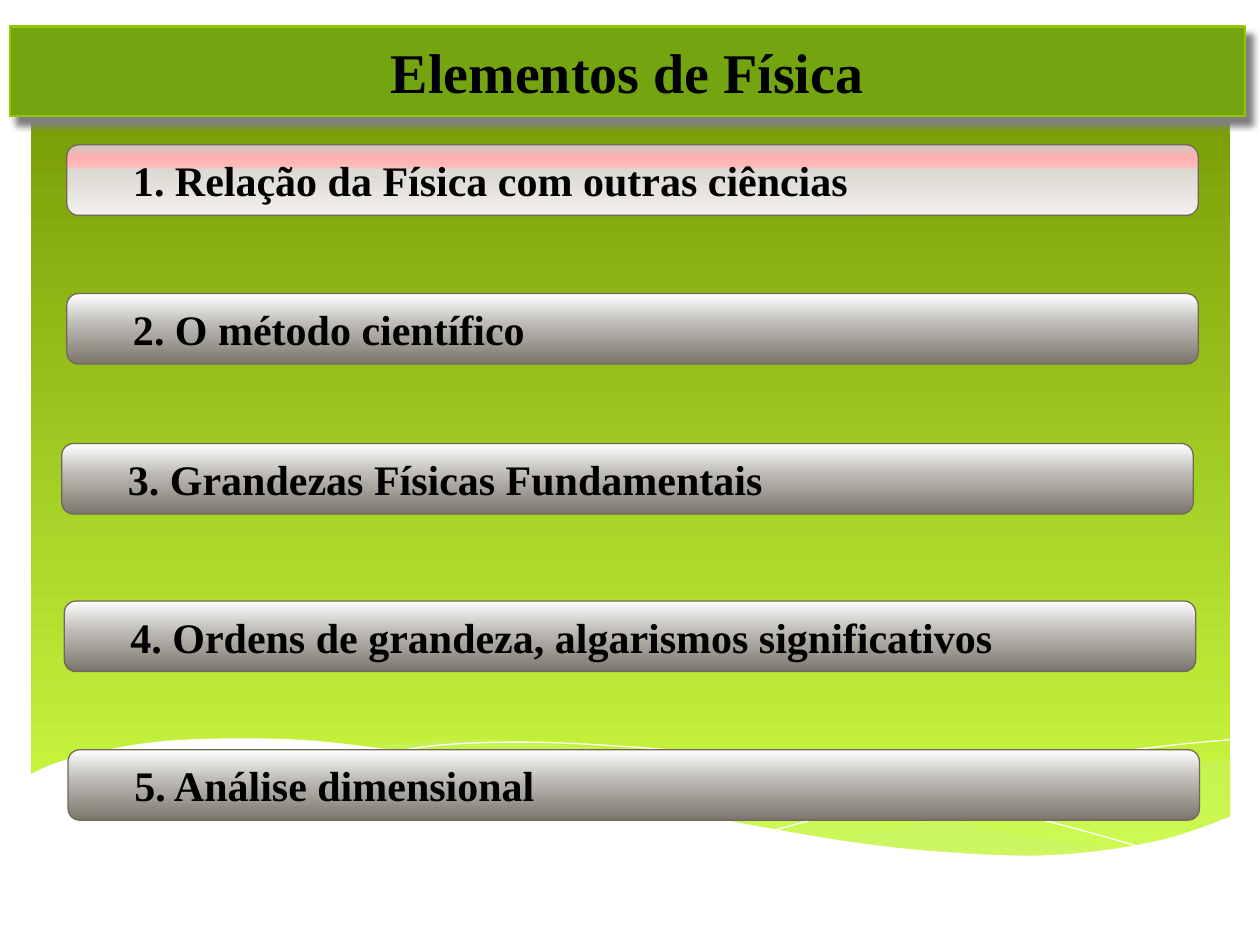
from lxml import etree
from pptx import Presentation
from pptx.dml.color import RGBColor
from pptx.enum.shapes import MSO_SHAPE
from pptx.enum.text import MSO_ANCHOR, MSO_AUTO_SIZE, PP_ALIGN
from pptx.oxml import parse_xml
from pptx.oxml.ns import nsdecls, qn
from pptx.util import Inches, Pt

ROUNDED = MSO_SHAPE.ROUNDED_RECTANGLE
MIDDLE = MSO_ANCHOR.MIDDLE
NO_AUTOFIT = MSO_AUTO_SIZE.NONE
CENTER = PP_ALIGN.CENTER
JUSTIFY = PP_ALIGN.JUSTIFY
TITLE_ONLY = 5
FONT = "Times New Roman"

COLORS = {
    "text": "000000",
    "white": "FFFFFF",
    "banner": "74A510",
    "banner_line": "94C600",
    "shadow": "808080",
    "bar_line": "71685A",
    "wave": "CAF278",
}
BACKDROP = [(0, "6F9400"), (100, "D0FF44")]
GRAY_BAR = [(0, "FFFFFF"), (44, "BCB9B4"), (100, "7B766D")]
PINK_BAR = [(0, "CEC7BF"), (18, "FFB0AF"), (26, "FFB7B6"),
            (31, "FFBBBA"), (35, "DCD8D2"), (100, "F2F0EE")]

TOPICS = [
    ("1. Relação da Física com outras ciências", 0.53, 1.15, PINK_BAR),
    ("2. O método científico", 0.53, 2.33, GRAY_BAR),
    ("3. Grandezas Físicas Fundamentais", 0.49, 3.52, GRAY_BAR),
    ("4. Ordens de grandeza, algarismos significativos", 0.51, 4.77, GRAY_BAR),
    ("5. Análise dimensional", 0.54, 5.95, GRAY_BAR),
]

RIGHT_WAVE_TOP = [(9.77, 6.01), (9.36, 6.09), (8.62, 6.25), (7.8, 6.44), (6.62, 6.67)]
RIGHT_WAVE_BOTTOM = [(6.62, 6.67), (7.06, 6.73), (7.58, 6.78), (8.15, 6.8),
                     (8.73, 6.76), (9.22, 6.67), (9.77, 6.49)]
MIDDLE_WAVE_TOP = [(8.94, 6.75), (8.08, 6.62), (7.07, 6.42), (6.3, 6.24), (5.55, 6.07),
                   (4.89, 5.96), (4.2, 5.89), (3.62, 5.87), (2.87, 5.93)]
MIDDLE_WAVE_BOTTOM = [(2.87, 5.93), (3.63, 6.04), (4.5, 6.24), (5.3, 6.42), (6.19, 6.6),
                      (6.96, 6.72), (7.62, 6.79), (8.29, 6.8), (8.94, 6.75)]
LONG_STROKE = [(3.1, 5.97), (3.53, 5.91), (4.17, 5.89), (4.89, 5.92), (5.57, 5.98),
               (6.37, 6.1), (7.28, 6.28), (8.32, 6.52), (9.08, 6.73)]
SHORT_STROKE = [(6.14, 6.59), (6.96, 6.37), (7.77, 6.18), (8.67, 6), (9.25, 5.92), (9.76, 5.87)]
FLOOR_TOP = [(0.23, 6.15), (0.46, 6.05), (0.85, 5.95), (1.32, 5.88), (1.93, 5.86),
             (2.5, 5.88), (3.16, 5.96), (3.91, 6.09), (4.47, 6.22), (5.29, 6.41),
             (6.03, 6.56), (6.88, 6.7), (7.61, 6.77), (8.23, 6.79), (8.75, 6.75),
             (9.2, 6.67), (9.5, 6.58), (9.77, 6.48)]
FLOOR_CORNERS = [(9.77, 7.31), (0.23, 7.31)]


def color(name):
    return RGBColor.from_string(COLORS[name])


def set_gradient(shape, stops):
    shape.fill.gradient()
    shape.fill.gradient_angle = 270
    stop_list = shape.fill._fill._gradFill.find(qn("a:gsLst"))
    for stop in list(stop_list):
        stop_list.remove(stop)
    for position, value in stops:
        stop = etree.SubElement(stop_list, qn("a:gs"), pos=str(position * 1000))
        etree.SubElement(stop, qn("a:srgbClr"), val=value)


def set_line(shape, name, width):
    shape.line.color.rgb = color(name)
    shape.line.width = Pt(width)


def set_text(shape, text, size, alignment):
    frame = shape.text_frame
    frame.text = text
    frame.word_wrap = True
    frame.auto_size = NO_AUTOFIT
    frame.vertical_anchor = MIDDLE
    paragraph = frame.paragraphs[0]
    paragraph.alignment = alignment
    paragraph.font.name = FONT
    paragraph.font.size = Pt(size)
    paragraph.font.bold = True
    paragraph.font.color.rgb = color("text")
    return paragraph


def smooth_curve(points, steps=5):
    padded = [points[0]] + points + [points[-1]]
    curve = [points[0]]
    for a, b, c, d in zip(padded, padded[1:], padded[2:], padded[3:]):
        for step in range(1, steps + 1):
            t = step / steps
            curve.append(tuple(
                b[i] + 0.5 * t * (c[i] - a[i]
                + t * (2 * a[i] - 5 * b[i] + 4 * c[i] - d[i]
                + t * (3 * (b[i] - c[i]) + d[i] - a[i])))
                for i in (0, 1)))
    return curve


def add_outline(slide, points, close):
    corners = [(Inches(x), Inches(y)) for x, y in points]
    builder = slide.shapes.build_freeform(*corners[0])
    builder.add_line_segments(corners[1:], close=close)
    shape = builder.convert_to_shape()
    shape.shadow.inherit = False
    return shape


def add_area(slide, points, fill, opacity=100):
    shape = add_outline(slide, points, True)
    shape.fill.solid()
    shape.fill.fore_color.rgb = color(fill)
    shape.line.fill.background()
    if opacity < 100:
        fill_color = shape._element.spPr.find(qn("a:solidFill"))[0]
        etree.SubElement(fill_color, qn("a:alpha"), val=str(opacity * 1000))


def add_stroke(slide, points):
    shape = add_outline(slide, smooth_curve(points), False)
    shape.fill.background()
    set_line(shape, "white", 0)


def add_rounded_box(slide, left, top, width, height, stops):
    shape = slide.shapes.add_shape(
        ROUNDED, Inches(left), Inches(top), Inches(width), Inches(height))
    shape.shadow.inherit = False
    set_gradient(shape, stops)
    return shape


def add_background(slide):
    backdrop = add_rounded_box(slide, 0.25, 0.25, 9.51, 6.6, BACKDROP)
    backdrop.adjustments[0] = 0.013
    backdrop.line.fill.background()
    add_area(slide, smooth_curve(RIGHT_WAVE_TOP) + smooth_curve(RIGHT_WAVE_BOTTOM), "wave", 29)
    add_area(slide, smooth_curve(MIDDLE_WAVE_TOP) + smooth_curve(MIDDLE_WAVE_BOTTOM), "wave", 40)
    add_stroke(slide, LONG_STROKE)
    add_stroke(slide, SHORT_STROKE)
    add_area(slide, smooth_curve(FLOOR_TOP) + FLOOR_CORNERS, "white")


def add_title_banner(slide, text):
    title = slide.shapes.title
    title.left, title.top = Inches(0.08), Inches(0.21)
    title.width, title.height = Inches(9.8), Inches(0.71)
    properties = title._element.spPr
    properties.append(parse_xml(
        f'<a:prstGeom {nsdecls("a")} prst="roundRect"><a:avLst/></a:prstGeom>'))
    title.fill.solid()
    title.fill.fore_color.rgb = color("banner")
    set_line(title, "banner_line", 1.5)
    properties.append(parse_xml(
        f'<a:effectLst {nsdecls("a")}><a:outerShdw blurRad="{Pt(4)}" dist="{Pt(6)}" '
        f'dir="{50 * 60000}" algn="tl" rotWithShape="0">'
        f'<a:srgbClr val="{COLORS["shadow"]}"/></a:outerShdw></a:effectLst>'))
    set_text(title, text, 32, CENTER)
    slide.shapes._spTree.append(title._element)


def add_topic_bar(slide, text, left, top, stops):
    bar = add_rounded_box(slide, left, top, 8.98, 0.56, stops)
    set_line(bar, "bar_line", 0.75)
    paragraph = set_text(bar, text, 24, JUSTIFY)
    paragraph._p.get_or_add_pPr().set("indent", str(Inches(0.4)))


def main():
    presentation = Presentation()
    presentation.slide_width = Inches(10)
    presentation.slide_height = Inches(7.5)
    slide = presentation.slides.add_slide(presentation.slide_layouts[TITLE_ONLY])
    add_background(slide)
    add_title_banner(slide, "Elementos de Física")
    for topic in TOPICS:
        add_topic_bar(slide, *topic)
    presentation.save("out.pptx")


if __name__ == "__main__":
    main()
